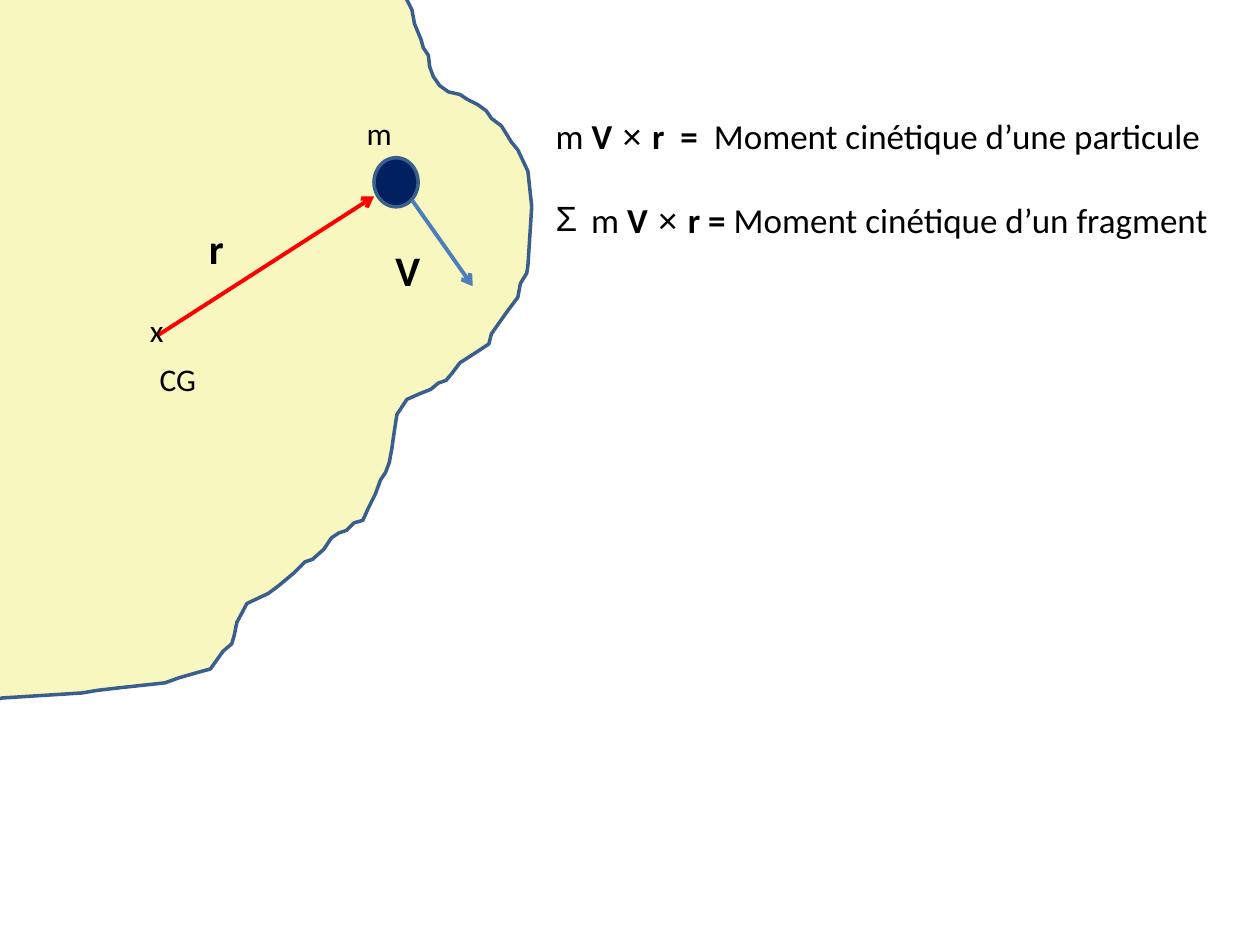
import pptx
import pptx.dml.color
import pptx.enum.shapes
import pptx.enum.text
import pptx.oxml
import pptx.oxml.ns
import pptx.util
from lxml import etree

Cm = pptx.util.Cm
Pt = pptx.util.Pt
qn = pptx.oxml.ns.qn

COLOURS = {
    "fragment": "EBE626",
    "outline": "3A5F8C",
    "particle": "002060",
    "radius": "FF0000",
    "velocity": "4B7EBC",
    "text": "000000",
}

HUNDREDTH_INCH = Cm(2.54) / 100
FRAGMENT_OUTLINE = [
    (304, -35), (311, -31), (317, -17), (319, -8), (324, 2), (327, 8),
    (329, 19), (334, 31), (336, 38), (340, 44), (341, 53), (344, 61),
    (349, 68), (356, 73), (365, 75), (371, 79), (379, 83), (386, 88),
    (390, 94), (398, 100), (406, 113), (411, 119), (419, 136), (422, 164),
    (419, 211), (418, 217), (413, 225), (411, 236), (402, 248), (390, 265),
    (388, 273), (379, 279), (365, 288), (359, 296), (354, 302), (348, 304),
    (342, 309), (332, 313), (323, 317), (315, 329), (313, 342), (311, 356),
    (309, 367), (306, 375), (302, 381), (298, 392), (292, 404), (288, 413),
    (281, 415), (275, 421), (269, 423), (263, 427), (257, 436), (248, 444),
    (242, 446), (233, 455), (221, 465), (213, 471), (196, 479), (188, 494),
    (186, 504), (184, 511), (177, 517), (167, 531), (156, 534), (142, 538),
    (131, 542), (94, 546), (77, 548), (65, 550), (2, 554), (-6, 556),
    (-29, 563), (-50, 571), (-62, 579), (-91, 594), (-112, 598),
    (-208, 602), (-231, 615), (-256, 609), (-281, 573), (-293, 546),
    (-297, 510), (-289, 486), (-273, 415), (-264, 371), (-258, 336),
    (-246, 292), (-235, 242), (-231, 206), (-233, 144), (-243, 117),
    (-241, 86), (-208, 75), (-131, 58), (-77, 46), (-73, 6), (-75, 0),
    (-73, -31), (-52, -46), (-16, -42), (13, -37), (52, -33), (69, -29),
    (92, -31), (134, -42), (156, -48), (188, -54), (210, -55), (231, -50),
    (256, -42), (279, -39),
]


def colour(name):
    return pptx.dml.color.RGBColor.from_string(COLOURS[name])


def style_shape(shape, fill, line):
    shape.shadow.inherit = False
    shape.fill.solid()
    shape.fill.fore_color.rgb = colour(fill)
    shape.line.color.rgb = colour(line)
    shape.line.width = Pt(2)


def add_run(paragraph, text, size, bold=False, font="Calibri"):
    run = paragraph.add_run()
    run.text = text
    run.font.size = Pt(size)
    run.font.bold = bold
    run.font.name = font
    run.font.color.rgb = colour("text")


def add_label(slide, origin, box, text, size, bold):
    left, top, width, height = box
    label = slide.shapes.add_textbox(
        Cm(origin[0] + left), Cm(origin[1] + top), Cm(width), Cm(height))
    label.text_frame.word_wrap = False
    add_run(label.text_frame.paragraphs[0], text, size, bold)


def add_vector(slide, origin, start, end, name):
    points = [Cm(offset + value) for point in (start, end)
              for offset, value in zip(origin, point)]
    vector = slide.shapes.add_connector(
        pptx.enum.shapes.MSO_CONNECTOR.STRAIGHT, *points)
    vector.line.color.rgb = colour(name)
    vector.line.width = Pt(2.25)
    etree.SubElement(vector.line._get_or_add_ln(), qn("a:tailEnd"), type="arrow")
    etree.SubElement(vector._element.spPr, qn("a:effectLst"))


def add_fragment(slide, origin):
    builder = slide.shapes.build_freeform(*FRAGMENT_OUTLINE[0], scale=HUNDREDTH_INCH)
    builder.add_line_segments(FRAGMENT_OUTLINE[1:], close=True)
    fragment = builder.convert_to_shape(Cm(origin[0]), Cm(origin[1]))
    style_shape(fragment, "fragment", "outline")
    fill_colour = fragment._element.spPr.find(qn("a:solidFill"))[0]
    etree.SubElement(fill_colour, qn("a:alpha"), val="29000")


def add_diagram(slide, left, top):
    origin = (left, top)
    add_fragment(slide, origin)
    add_vector(slide, origin, (3.18, 6.76), (7.54, 3.96), "radius")
    particle = slide.shapes.add_shape(
        pptx.enum.shapes.MSO_SHAPE.OVAL,
        Cm(left + 7.54), Cm(top + 3.18), Cm(0.89), Cm(0.99))
    style_shape(particle, "particle", "outline")
    add_vector(slide, origin, (8.31, 4.04), (9.53, 5.77), "velocity")
    for box, text, size, bold in [
        ((2.97, 7.14, 1.24, 1.02), "CG", 18, False),
        ((7.14, 2.18, 1.02, 1.02), "m", 18, False),
        ((3.96, 4.37, 0.81, 1.3), "r", 24, True),
        ((7.72, 4.8, 1.02, 1.3), "V", 24, True),
        ((2.77, 6.15, 0.79, 1.02), "x", 18, False),
    ]:
        add_label(slide, origin, box, text, size, bold)


def add_sum_bullet(paragraph):
    properties = paragraph._p.get_or_add_pPr()
    indent = Cm(0.56)
    properties.set("marL", str(indent))
    properties.set("indent", str(-indent))
    etree.SubElement(properties, qn("a:buFont"), typeface="Arial")
    etree.SubElement(properties, qn("a:buChar"), char="Σ")


def add_formulas(slide, left, top, width, height):
    box = slide.shapes.add_textbox(Cm(left), Cm(top), Cm(width), Cm(height))
    frame = box.text_frame
    frame.word_wrap = True
    particle_line = frame.paragraphs[0]
    fragment_line = frame.add_paragraph()
    fragment_line.space_before = Pt(24)
    add_sum_bullet(fragment_line)
    for paragraph, mass, radius, meaning in [
        (particle_line, "m ", "r  =  ", "Moment cinétique d’une particule"),
        (fragment_line, " m ", "r = ", "Moment cinétique d’un fragment"),
    ]:
        add_run(paragraph, mass, 20)
        add_run(paragraph, "V", 20, bold=True)
        add_run(paragraph, " × ", 20, font="Arial")
        add_run(paragraph, radius, 20, bold=True)
        add_run(paragraph, meaning, 20)


def main():
    presentation = pptx.Presentation()
    presentation.slide_width = Cm(25.4)
    presentation.slide_height = Cm(19.05)
    slide = presentation.slides.add_slide(presentation.slide_layouts[6])
    add_diagram(slide, 0, 0)
    add_formulas(slide, 10.95, 2.18, 14.53, 3.68)
    presentation.save("out.pptx")


if __name__ == "__main__":
    main()
